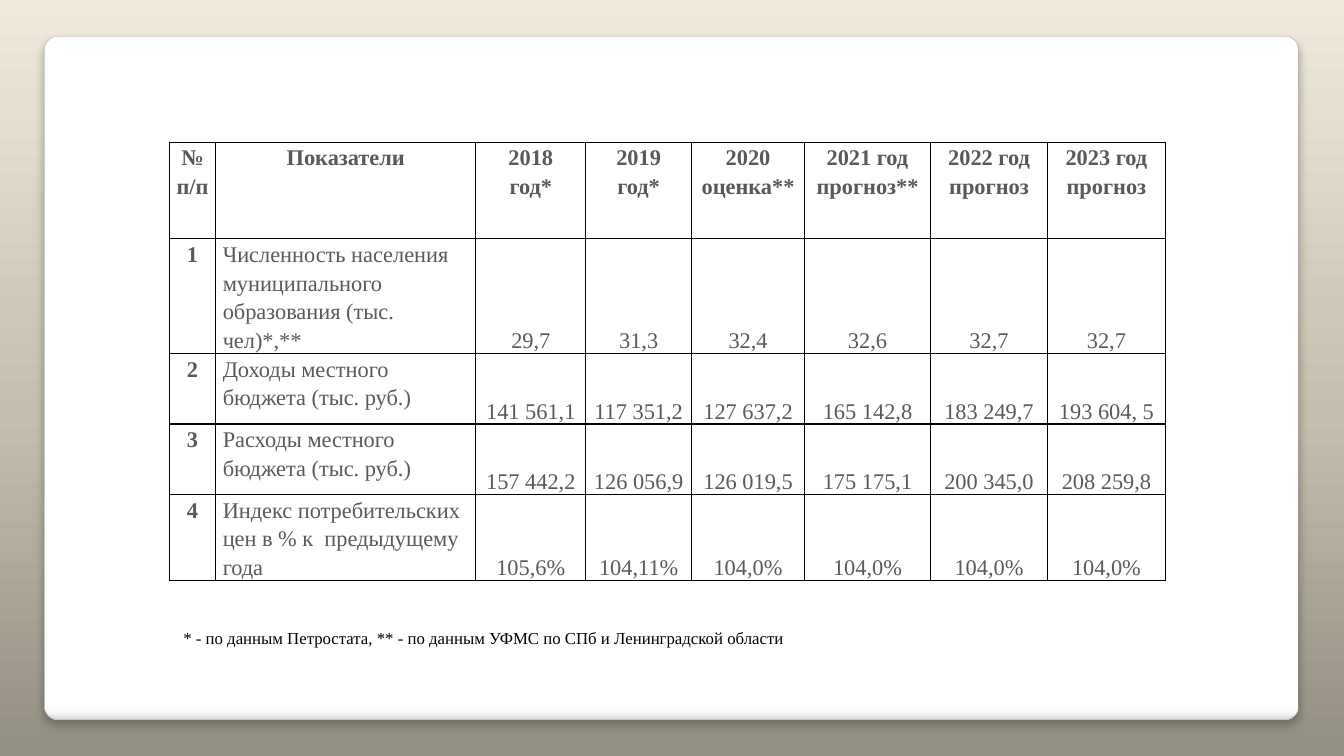
from lxml import etree
from pptx import Presentation
from pptx.dml.color import RGBColor
from pptx.enum.shapes import MSO_SHAPE
from pptx.enum.text import MSO_ANCHOR, MSO_AUTO_SIZE, PP_ALIGN
from pptx.oxml.ns import qn
from pptx.util import Emu, Pt

ROUNDED = MSO_SHAPE.ROUNDED_RECTANGLE
TOP, MIDDLE, BOTTOM = MSO_ANCHOR.TOP, MSO_ANCHOR.MIDDLE, MSO_ANCHOR.BOTTOM
LEFT, CENTER = PP_ALIGN.LEFT, PP_ALIGN.CENTER
GROW = MSO_AUTO_SIZE.SHAPE_TO_FIT_TEXT

FONT = "Times New Roman"
COLORS = {
    "sand_dark": "938E82", "sand": "C4BEAD", "sand_light": "F0EADC",
    "white": "FFFFFF", "edge_light": "F7F7F7", "edge": "DADADA",
    "outline": "A4A4A4", "text": "595959", "black": "000000",
}
COLUMN_WIDTHS = [46, 258, 109, 105, 112, 125, 116, 117]
ROW_HEIGHTS = [96, 106, 70, 70, 70]
HEADINGS = ["№ п/п", "Показатели", "2018\nгод*", "2019\nгод*", "2020\nоценка**",
            "2021 год\nпрогноз**", "2022 год\nпрогноз", "2023 год\nпрогноз"]
INDICATORS = [
    ["Численность населения муниципального образования (тыс. чел)*,**",
     "29,7", "31,3", "32,4", "32,6", "32,7", "32,7"],
    ["Доходы местного бюджета (тыс. руб.)",
     "141 561,1", "117 351,2", "127 637,2", "165 142,8", "183 249,7", "193 604, 5"],
    ["Расходы местного бюджета (тыс. руб.)",
     "157 442,2", "126 056,9", "126 019,5", "175 175,1", "200 345,0", "208 259,8"],
    ["Индекс потребительских цен в % к  предыдущему года",
     "105,6%", "104,11%", "104,0%", "104,0%", "104,0%", "104,0%"],
]
FOOTNOTE = "* - по данным Петростата, ** - по данным УФМС по СПб и Ленинградской области"


def px(length):
    return Emu(length * 9144)


def rgb(name):
    return RGBColor.from_string(COLORS[name])


def add_color(parent, name):
    return etree.SubElement(parent, qn("a:srgbClr"), val=COLORS[name])


def set_gradient(fill, owner, stops, angle):
    fill.gradient()
    fill.gradient_angle = angle
    stop_list = owner.find(".//" + qn("a:gsLst"))
    for old_stop in list(stop_list):
        stop_list.remove(old_stop)
    for position, color in stops:
        stop = etree.SubElement(stop_list, qn("a:gs"), pos=str(position * 1000))
        add_color(stop, color)


def set_font(paragraph, size, color, bold=False):
    font = paragraph.font
    font.name, font.size, font.bold = FONT, Pt(size), bold
    font.color.rgb = rgb(color)


def paint_background(slide):
    set_gradient(slide.background.fill, slide.element,
                 [(0, "sand_dark"), (45, "sand"), (100, "sand_light")], 90)


def add_panel(slide, box):
    panel = slide.shapes.add_shape(ROUNDED, *map(px, box))
    panel.adjustments[0] = 0.02
    set_gradient(panel.fill, panel.element,
                 [(0, "white"), (98, "white"), (99, "edge_light"), (100, "edge")], 270)
    panel.line.color.rgb = rgb("outline")
    panel.line.width = Pt(0.16)
    panel.shadow.inherit = False
    effects = panel.element.spPr.find(qn("a:effectLst"))
    shadow = etree.SubElement(effects, qn("a:outerShdw"), blurRad=str(Pt(6)),
                              dist=str(Pt(4)), dir="5400000", rotWithShape="0")
    etree.SubElement(add_color(shadow, "black"), qn("a:alpha"), val="25000")


def set_borders(cell):
    properties = cell._tc.get_or_add_tcPr()
    for index, side in enumerate(["a:lnL", "a:lnR", "a:lnT", "a:lnB"]):
        border = etree.Element(qn(side), w=str(Pt(1)))
        add_color(etree.SubElement(border, qn("a:solidFill")), "black")
        properties.insert(index, border)


def fill_cell(cell, text, row, column):
    cell.fill.background()
    set_borders(cell)
    cell.margin_left = cell.margin_right = px(7)
    cell.margin_top = cell.margin_bottom = 0
    cell.vertical_anchor = BOTTOM if row and column > 1 else TOP
    cell.text_frame.text = text
    for paragraph in cell.text_frame.paragraphs:
        paragraph.alignment = LEFT if row and column == 1 else CENTER
        paragraph.line_spacing = 1.15
        paragraph.space_before = Pt(0 if row or column else 12)
        paragraph.space_after = Pt(0 if row == 0 and column > 1 else 10)
        set_font(paragraph, 16, "text", row == 0 or column == 0)


def add_indicator_table(slide, box):
    rows = [HEADINGS] + [[str(number), *values]
                         for number, values in enumerate(INDICATORS, 1)]
    table = slide.shapes.add_table(len(rows), len(HEADINGS), *map(px, box)).table
    table.first_row = table.horz_banding = False
    for column, width in zip(table.columns, COLUMN_WIDTHS):
        column.width = px(width)
    for row, height in zip(table.rows, ROW_HEIGHTS):
        row.height = px(height)
    for row, texts in enumerate(rows):
        for column, text in enumerate(texts):
            fill_cell(table.cell(row, column), text, row, column)


def add_footnote(slide, box):
    frame = slide.shapes.add_textbox(*map(px, box)).text_frame
    frame.word_wrap = True
    frame.auto_size = GROW
    frame.vertical_anchor = MIDDLE
    note = frame.paragraphs[0]
    note.text = FOOTNOTE
    set_font(note, 12, "black")
    note._p.get_or_add_pPr().set("indent", str(px(49)))


def main():
    presentation = Presentation()
    presentation.slide_width, presentation.slide_height = px(1333), px(750)
    slide = presentation.slides.add_slide(presentation.slide_layouts[6])
    paint_background(slide)
    add_panel(slide, (44, 36, 1244, 678))
    add_indicator_table(slide, (168, 141, sum(COLUMN_WIDTHS), sum(ROW_HEIGHTS)))
    add_footnote(slide, (123, 618, 883, 30))
    presentation.save("out.pptx")


if __name__ == "__main__":
    main()
